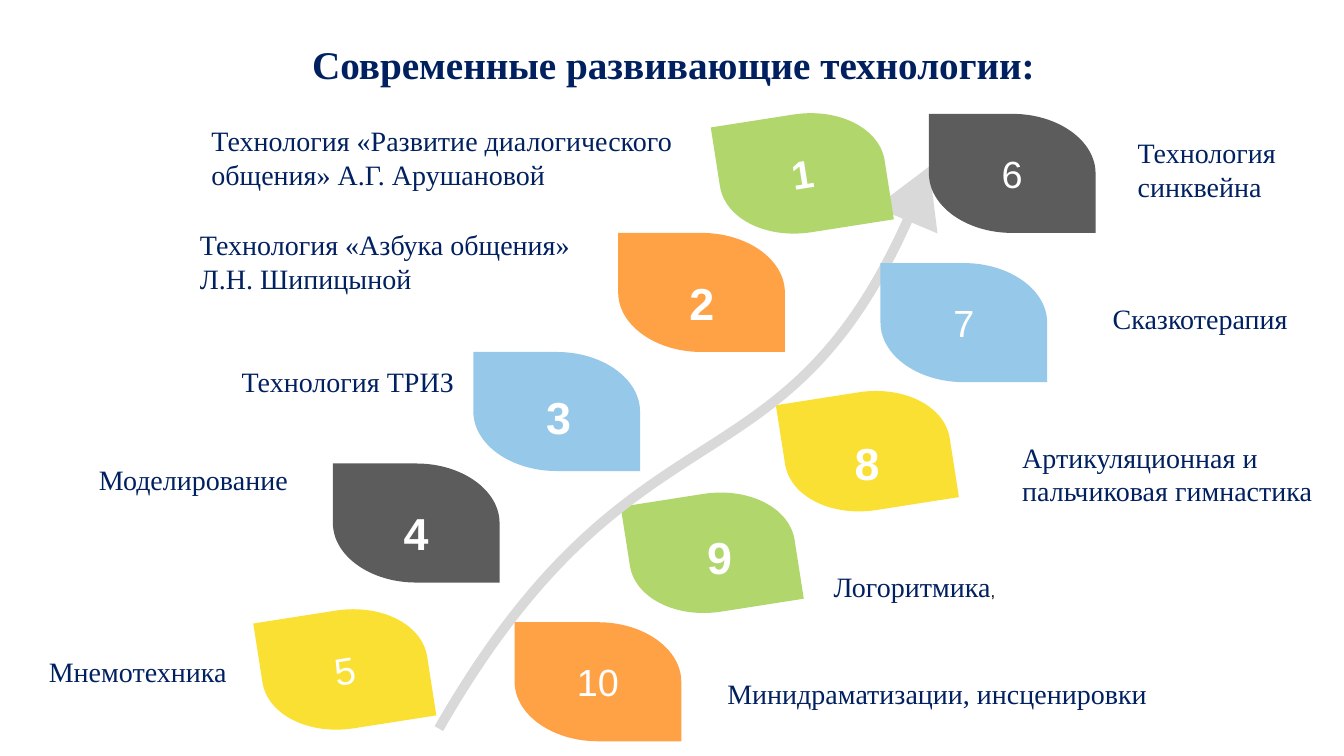
from lxml import etree
from pptx import Presentation
from pptx.dml.color import RGBColor
from pptx.enum.shapes import MSO_SHAPE
from pptx.enum.text import MSO_ANCHOR, MSO_AUTO_SIZE, PP_ALIGN
from pptx.oxml.ns import qn
from pptx.util import Cm, Pt

TRIANGLE = MSO_SHAPE.ISOSCELES_TRIANGLE
MIDDLE, TOP = MSO_ANCHOR.MIDDLE, MSO_ANCHOR.TOP
NO_FIT = MSO_AUTO_SIZE.NONE
CENTER, LEFT = PP_ALIGN.CENTER, PP_ALIGN.LEFT

COLORS = {
    "navy": "002060", "white": "FFFFFF", "black": "000000", "path": "D9D9D9",
    "green": "B0D66C", "yellow": "FBE034", "gray": "5C5C5C",
    "blue": "96C8E9", "orange": "FFA246",
}
FORMATS = {
    "title": {"name": "Times New Roman", "size": Pt(28), "bold": True},
    "label": {"name": "Times New Roman", "size": Pt(20), "bold": False},
    "comma": {"name": "Arial", "size": Pt(12), "bold": False},
    "number": {"name": "Arial", "size": Pt(27), "bold": False},
    "first": {"name": "Arial", "size": Pt(28), "bold": True},
    "large": {"name": "Arial", "size": Pt(32), "bold": True},
}
LEAF_W, LEAF_H, TILT = 4.2, 3.0, -8.9
ROUND = 0.55  # handle length of a quarter ellipse

# Leaves: number, left, top, colour, turn (cm and degrees)
BACK_LEAVES = [
    ("9", 15.85, 12.43, "green", TILT),
    ("8", 19.76, 9.87, "yellow", TILT),
    ("4", 8.39, 11.68, "gray", 0),
    ("3", 11.93, 8.87, "blue", 0),
    ("2", 15.58, 5.87, "orange", 0),
]
FRONT_LEAVES = [
    ("10", 12.97, 15.68, "orange", 0),
    ("7", 22.19, 6.63, "blue", 0),
    ("6", 23.41, 2.87, "gray", 0),
    ("1", 18.12, 2.87, "green", TILT),
    ("5", 6.59, 15.37, "yellow", TILT),
]
# Upright numbers: text, left, top
NUMBERS = [
    ("2", 16.77, 6.81), ("3", 13.16, 9.69), ("4", 9.57, 12.61),
    ("9", 17.22, 13.21), ("8", 20.94, 10.85),
]
# Labels: text, left, top, width, height
LABELS = [
    ("Технология «Развитие диалогического общения» А.Г. Арушановой",
     5.08, 3, 12.65, 1.96),
    ("Технология «Азбука общения»\nЛ.Н. Шипицыной", 4.79, 5.62, 12.9, 1.96),
    ("Технология ТРИЗ", 5.84, 9.07, 6, 1.12),
    ("Моделирование", 2.24, 11.52, 6, 1.12),
    ("Мнемотехника", 0.98, 16.36, 5.03, 1.12),
    ("Технология синквейна", 28.42, 3.3, 5.44, 1.96),
    ("Сказкотерапия", 27.79, 7.47, 5.13, 1.12),
    ("Артикуляционная и пальчиковая гимнастика", 25.51, 10.97, 8.1, 1.96),
    ("Логоритмика", 20.76, 14.22, 6, 1.12),
    ("Минидраматизации, инсценировки", 18.08, 16.92, 11.2, 1.12),
]


def rgb(color):
    return RGBColor.from_string(COLORS[color])


def add_run(para, text, style, color):
    run = para.add_run()
    run.text = text
    for key, value in FORMATS[style].items():
        setattr(run.font, key, value)
    run.font.color.rgb = rgb(color)


def write(frame, text, style, color, align, anchor):
    frame.word_wrap = True
    frame.auto_size = NO_FIT
    frame.vertical_anchor = anchor
    for index, line in enumerate(text.split("\n")):
        para = frame.add_paragraph() if index else frame.paragraphs[0]
        para.alignment = align
        add_run(para, line, style, color)


def add_box(slide, text, place, style, color, align, anchor):
    box = slide.shapes.add_textbox(*map(Cm, place))
    write(box.text_frame, text, style, color, align, anchor)
    return box.text_frame


def paint(shape, color):
    shape.shadow.inherit = False
    shape.fill.solid()
    shape.fill.fore_color.rgb = rgb(color)
    shape.line.fill.background()


def draw(slide, start, parts, close):
    # A part holds one point for a line or three for a curve
    pen = slide.shapes.build_freeform(Cm(start[0]), Cm(start[1]))
    ends = [(Cm(part[-1][0]), Cm(part[-1][1])) for part in parts]
    pen.add_line_segments(ends, close=close)
    shape = pen.convert_to_shape()
    lines = list(shape.element.iter(qn("a:lnTo")))
    for line, part in zip(lines, parts):
        if len(part) == 3:
            bend = etree.Element(qn("a:cubicBezTo"))
            for x, y in part:
                etree.SubElement(bend, qn("a:pt"), x=str(Cm(x) - shape.left),
                                 y=str(Cm(y) - shape.top))
            line.getparent().replace(line, bend)
    return shape


def add_leaf(slide, left, top, color, turn):
    # Two sharp corners, two quarter ellipses
    half_w, half_h = LEAF_W / 2, LEAF_H / 2

    def at(x, y):
        return left + half_w * (1 + x), top + half_h * (1 + y)

    parts = []
    for side in (1, -1):
        parts += [
            [at(-side, -side)],
            [at(-side, 0)],
            [at(-side, side * ROUND), at(-side * ROUND, side), at(0, side)],
        ]
    leaf = draw(slide, at(0, -1), parts, True)
    paint(leaf, color)
    leaf.rotation = turn
    return leaf


def add_curve(slide):
    bend = [(16.08, 9.6), (19.89, 12.83), (23.13, 4.95)]
    curve = draw(slide, (11.06, 18.36), [bend], False)
    curve.shadow.inherit = False
    curve.fill.background()
    curve.line.color.rgb = rgb("path")
    curve.line.width = Pt(7)


def add_title(slide, text):
    title = slide.shapes.title
    title.left, title.top = Cm(0.89), Cm(0.94)
    title.width, title.height = Cm(32.16), Cm(2)
    frame = title.text_frame
    write(frame, text, "title", "navy", CENTER, MIDDLE)
    frame.margin_bottom = Cm(0.65)
    frame.paragraphs[0].line_spacing = 0.9


def main():
    deck = Presentation()
    deck.slide_width, deck.slide_height = Cm(33.87), Cm(19.05)
    slide = deck.slides.add_slide(deck.slide_layouts[5])
    add_title(slide, "Современные развивающие технологии:")

    # Leaves behind the arrow
    for number, *place in BACK_LEAVES:
        add_leaf(slide, *place)

    # Curved arrow
    add_curve(slide)

    # Upright numbers
    for number, left, top in NUMBERS:
        add_box(slide, number, (left, top, 1.83, 1.63),
                "large", "white", CENTER, MIDDLE)

    # Arrow tip
    tip = slide.shapes.add_shape(TRIANGLE, Cm(22.28), Cm(4.14), Cm(1.7), Cm(1.47))
    paint(tip, "path")
    tip.rotation = 22.9

    # Leaves in front of the arrow
    for number, *place in FRONT_LEAVES:
        leaf = add_leaf(slide, *place)
        style = "first" if number == "1" else "number"
        write(leaf.text_frame, number, style, "white", CENTER, MIDDLE)

    # Labels
    for text, *place in LABELS:
        frame = add_box(slide, text, place, "label", "navy", LEFT, TOP)
        if text == "Логоритмика":
            add_run(frame.paragraphs[0], ",", "comma", "black")

    deck.save("out.pptx")


if __name__ == "__main__":
    main()
